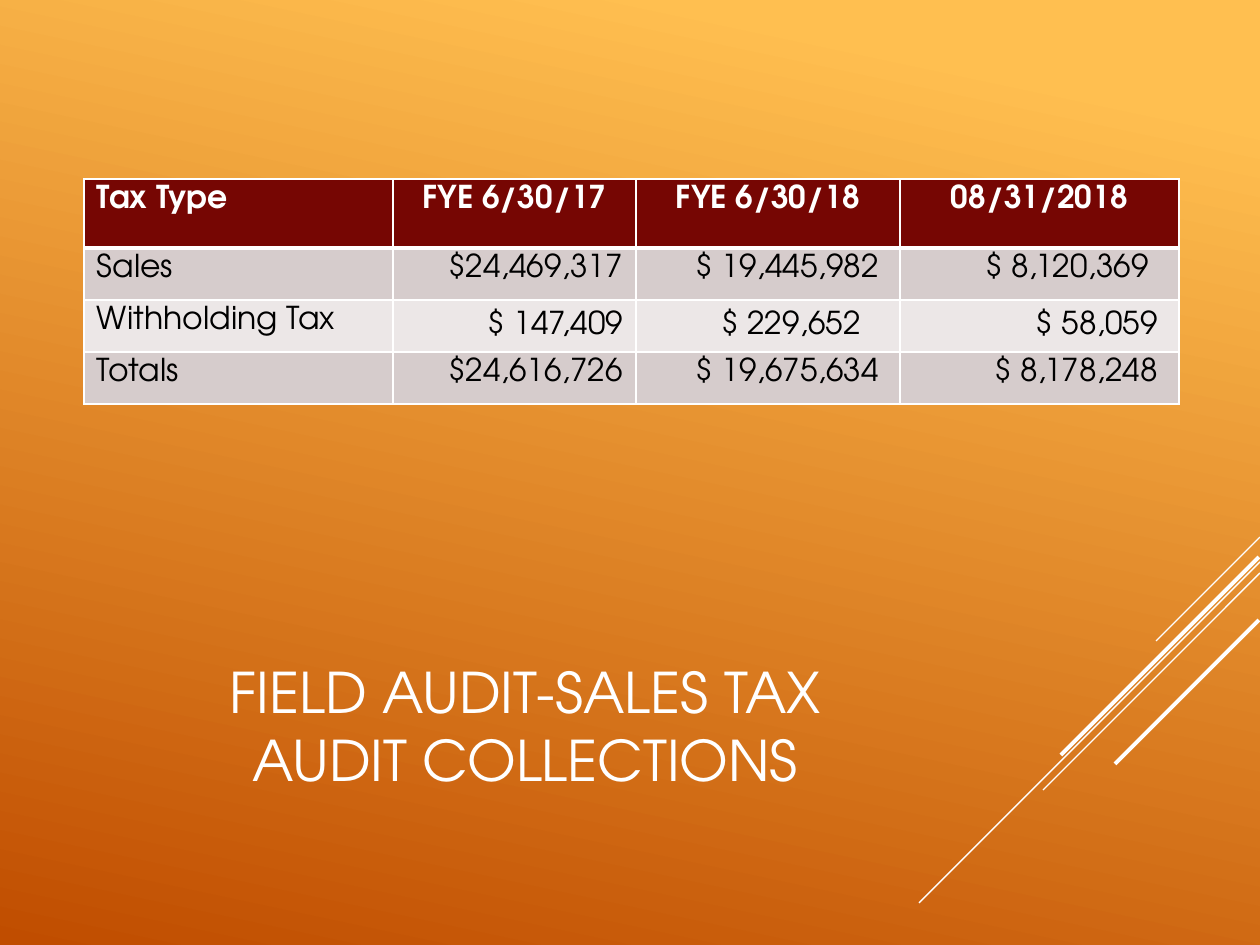
import lxml.etree
import pptx
import pptx.dml.color
import pptx.enum.shapes
import pptx.enum.text
import pptx.oxml.ns
import pptx.util

EMU_PER_PX = 914400 // 126
FONT = "TeX Gyre Adventor"
WHITE, BLACK = "FFFFFF", "000000"
MAROON, ROSE, PALE = "760603", "D6CCCC", "ECE7E7"
ALIGN = pptx.enum.text.PP_ALIGN
ANCHOR = pptx.enum.text.MSO_ANCHOR


def px(length):
    return pptx.util.Emu(length * EMU_PER_PX)


def color(value):
    return pptx.dml.color.RGBColor.from_string(value)


def write_text(frame, text, size=18, fill=BLACK, bold=False, align=ALIGN.LEFT):
    frame.word_wrap = True
    paragraph = frame.paragraphs[0]
    paragraph.text = text
    paragraph.alignment = align
    for run in paragraph.runs:
        run.font.name = FONT
        run.font.size = pptx.util.Pt(size)
        run.font.bold = bold
        run.font.color.rgb = color(fill)


def add_background(slide):
    fill = slide.background.fill
    fill.gradient()
    fill.gradient_angle = 258
    for stop, (position, value) in zip(fill.gradient_stops, [(0.1, "FFBF50"), (1, "C04D00")]):
        stop.position = position
        stop.color.rgb = color(value)


def add_diagonals(slide, left, top):
    # Each stroke falls to the left at 45 degrees: start x, start y, length, width
    strokes = [(340, 0, 104, 0.75), (340, 25, 341, 0.75), (340, 36, 217, 0.75),
               (339, 20, 198, 2.25), (339, 83, 144, 2.25)]
    for x, y, length, width in strokes:
        line = slide.shapes.add_connector(
            pptx.enum.shapes.MSO_CONNECTOR.STRAIGHT,
            px(left + x), px(top + y), px(left + x - length), px(top + y + length))
        line.line.color.rgb = color(WHITE)
        line.line.width = pptx.util.Pt(width)
        lxml.etree.SubElement(line._element.spPr, pptx.oxml.ns.qn("a:effectLst"))


def add_title(slide, left, top, width, height):
    box = slide.shapes.add_textbox(px(left), px(top), px(width), px(height))
    box.text_frame.vertical_anchor = ANCHOR.MIDDLE
    write_text(box.text_frame, "FIELD AUDIT-SALES TAX\vAUDIT COLLECTIONS",
               size=32, fill=WHITE, align=ALIGN.CENTER)


def set_borders(cell, **widths):
    properties = cell._tc.get_or_add_tcPr()
    for index, side in enumerate("LRTB"):
        border = lxml.etree.Element(pptx.oxml.ns.qn(f"a:ln{side}"),
                                    w=str(pptx.util.Pt(widths.get(side, 1))))
        fill = lxml.etree.SubElement(border, pptx.oxml.ns.qn("a:solidFill"))
        lxml.etree.SubElement(fill, pptx.oxml.ns.qn("a:srgbClr"), val=WHITE)
        properties.insert(index, border)


def add_collections_table(slide, left, top):
    column_widths = [309, 243, 264, 279]
    row_heights = [69, 52, 52, 52]
    row_fills = [MAROON, ROSE, PALE, ROSE]
    rows = [
        ["Tax Type", "FYE 6/30/17", "FYE 6/30/18", "08/31/2018"],
        ["Sales", "$24,469,317", "$ 19,445,982", "$ 8,120,369"],
        ["Withholding Tax", "$ 147,409", "$ 229,652", "$ 58,059"],
        ["Totals", "$24,616,726", "$ 19,675,634", "$ 8,178,248"],
    ]
    # Right margins that set the amounts in from the cell edge
    insets = {(1, 2): 21, (1, 3): 30, (2, 2): 39, (2, 3): 21, (3, 2): 21, (3, 3): 21}

    table = slide.shapes.add_table(4, 4, px(left), px(top), px(sum(column_widths)),
                                   px(sum(row_heights))).table
    for column, width in zip(table.columns, column_widths):
        column.width = px(width)
    for r, texts in enumerate(rows):
        table.rows[r].height = px(row_heights[r])
        header = r == 0
        for c, text in enumerate(texts):
            cell = table.cell(r, c)
            cell.margin_left = px(13)
            cell.margin_right = px(insets.get((r, c), 13))
            cell.margin_top = cell.margin_bottom = px(6)
            cell.vertical_anchor = ANCHOR.MIDDLE if r == 2 and c else ANCHOR.TOP
            cell.fill.solid()
            cell.fill.fore_color.rgb = color(row_fills[r])
            set_borders(cell, T=3 if r == 1 else 1, B=3 if header else 1)
            align = ALIGN.LEFT if c == 0 else ALIGN.CENTER if header else ALIGN.RIGHT
            write_text(cell.text_frame, text, fill=WHITE if header else BLACK,
                       bold=header, align=align)


def main():
    presentation = pptx.Presentation()
    presentation.slide_width, presentation.slide_height = px(1260), px(945)
    slide = presentation.slides.add_slide(presentation.slide_layouts[6])
    add_background(slide)
    add_diagonals(slide, 920, 537)
    add_title(slide, 74, 620, 903, 210)
    add_collections_table(slide, 84, 179)
    presentation.save("out.pptx")


if __name__ == "__main__":
    main()
